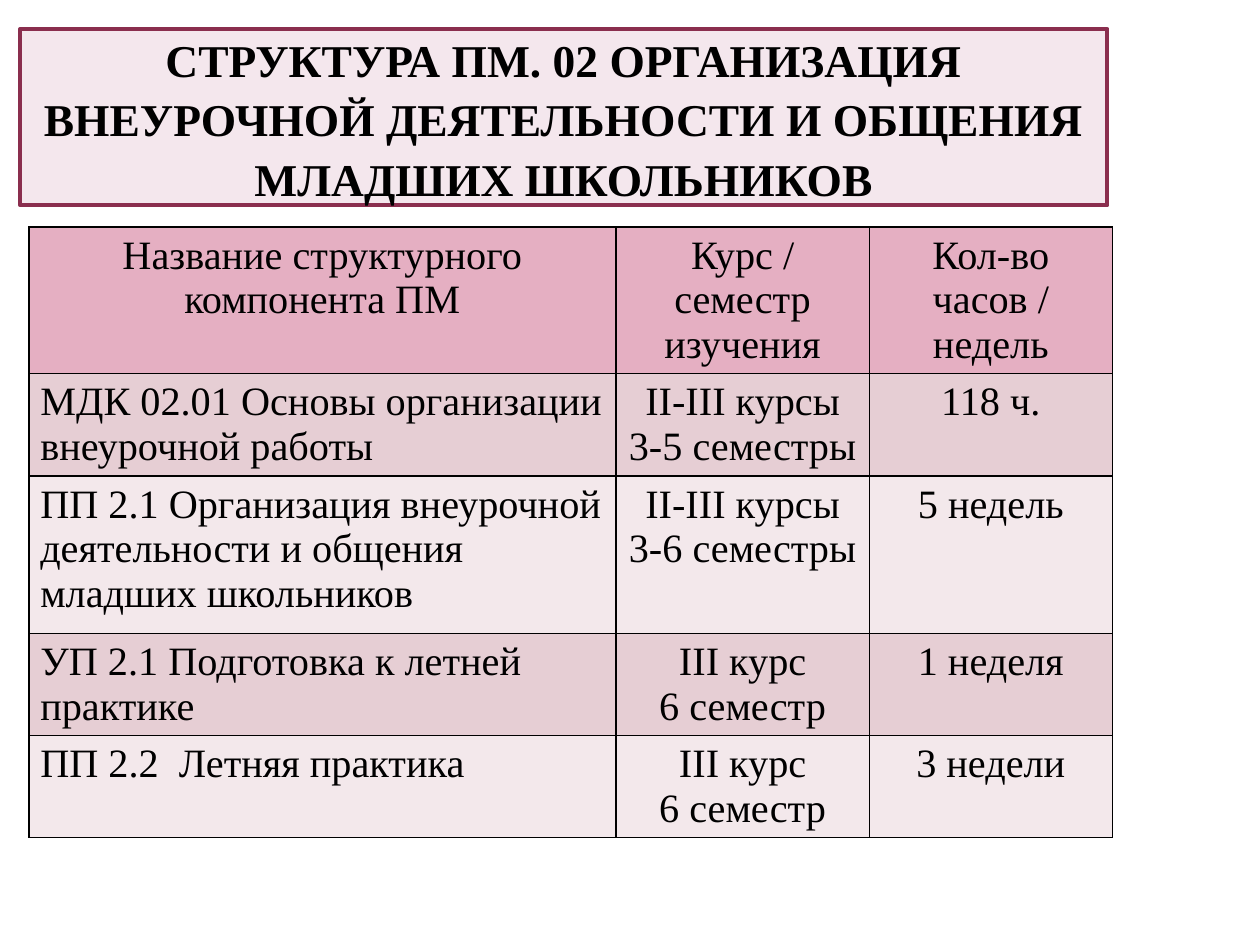
from lxml.etree import SubElement
from pptx import Presentation
from pptx.dml.color import RGBColor
from pptx.enum.shapes import MSO_SHAPE
from pptx.enum.text import MSO_ANCHOR, PP_ALIGN
from pptx.oxml.ns import qn
from pptx.util import Inches, Pt

FONT = "Times New Roman"
BLACK = "000000"
TITLE = "СТРУКТУРА ПМ. 02 ОРГАНИЗАЦИЯ ВНЕУРОЧНОЙ ДЕЯТЕЛЬНОСТИ И ОБЩЕНИЯ МЛАДШИХ ШКОЛЬНИКОВ"
COLUMN_WIDTHS = [4.66, 2.01, 1.93]
ROW_HEIGHTS = [1.16, 0.81, 1.25, 0.81, 0.81]
HEADER_FILL = "E5AFC2"
BAND_FILLS = ["F3E8EB", "E6CED4"]
ROWS = [
    ["Название структурного компонента ПМ", "Курс / семестр изучения", "Кол-во часов / недель"],
    ["МДК 02.01 Основы организации внеурочной работы", "II-III курсы\n3-5 семестры", "118 ч."],
    ["ПП 2.1 Организация внеурочной деятельности и общения младших школьников",
     "II-III курсы\n3-6 семестры", "5 недель"],
    ["УП 2.1 Подготовка к летней практике", "III курс\n6 семестр", "1 неделя"],
    ["ПП 2.2  Летняя практика", "III курс\n6 семестр", "3 недели"],
]


def color(value):
    return RGBColor.from_string(value)


def paint(target, value):
    target.fill.solid()
    target.fill.fore_color.rgb = color(value)


def write(text_frame, text, size, alignment, bold=False):
    for index, line in enumerate(text.split("\n")):
        paragraph = text_frame.add_paragraph() if index else text_frame.paragraphs[0]
        paragraph.alignment = alignment
        run = paragraph.add_run()
        run.text = line
        run.font.name = FONT
        run.font.size = Pt(size)
        run.font.bold = bold
        run.font.color.rgb = color(BLACK)


def add_title(slide):
    shape = slide.shapes.add_shape(
        MSO_SHAPE.RECTANGLE, Inches(0.16), Inches(0.23), Inches(8.63), Inches(1.4))
    shape.shadow.inherit = False
    paint(shape, "F4E7ED")
    shape.line.color.rgb = color("8A2E4E")
    shape.line.width = Pt(2.25)
    text_frame = shape.text_frame
    text_frame.word_wrap = True
    text_frame.vertical_anchor = MSO_ANCHOR.BOTTOM
    text_frame.margin_left = text_frame.margin_right = Inches(0.05)
    text_frame.margin_top = text_frame.margin_bottom = 0
    write(text_frame, TITLE, 26, PP_ALIGN.CENTER, bold=True)
    text_frame.paragraphs[0].line_spacing = 1.09


def add_borders(cell):
    properties = cell._tc.get_or_add_tcPr()
    for position, side in enumerate(["lnL", "lnR", "lnT", "lnB"]):
        border = SubElement(properties, qn(f"a:{side}"), w=str(Pt(1)))
        fill = SubElement(border, qn("a:solidFill"))
        SubElement(fill, qn("a:srgbClr"), val=BLACK)
        properties.insert(position, border)


def fill_cell(cell, text, row, column):
    paint(cell, BAND_FILLS[row % 2] if row else HEADER_FILL)
    add_borders(cell)
    cell.margin_left = cell.margin_right = Inches(0.09)
    cell.margin_top = cell.margin_bottom = Inches(0.05)
    centered = row == 0 or column > 0
    write(cell.text_frame, text, 23, PP_ALIGN.CENTER if centered else PP_ALIGN.LEFT)


def add_structure_table(slide):
    table = slide.shapes.add_table(
        len(ROWS), len(COLUMN_WIDTHS), Inches(0.23), Inches(1.8),
        Inches(sum(COLUMN_WIDTHS)), Inches(sum(ROW_HEIGHTS))).table
    for column, width in zip(table.columns, COLUMN_WIDTHS):
        column.width = Inches(width)
    for row, height in zip(table.rows, ROW_HEIGHTS):
        row.height = Inches(height)
    for row, texts in enumerate(ROWS):
        for column, text in enumerate(texts):
            fill_cell(table.cell(row, column), text, row, column)


def main():
    presentation = Presentation()
    presentation.slide_width = Inches(10)
    presentation.slide_height = Inches(7.5)
    slide = presentation.slides.add_slide(presentation.slide_layouts[6])
    add_title(slide)
    add_structure_table(slide)
    presentation.save("out.pptx")


if __name__ == "__main__":
    main()
